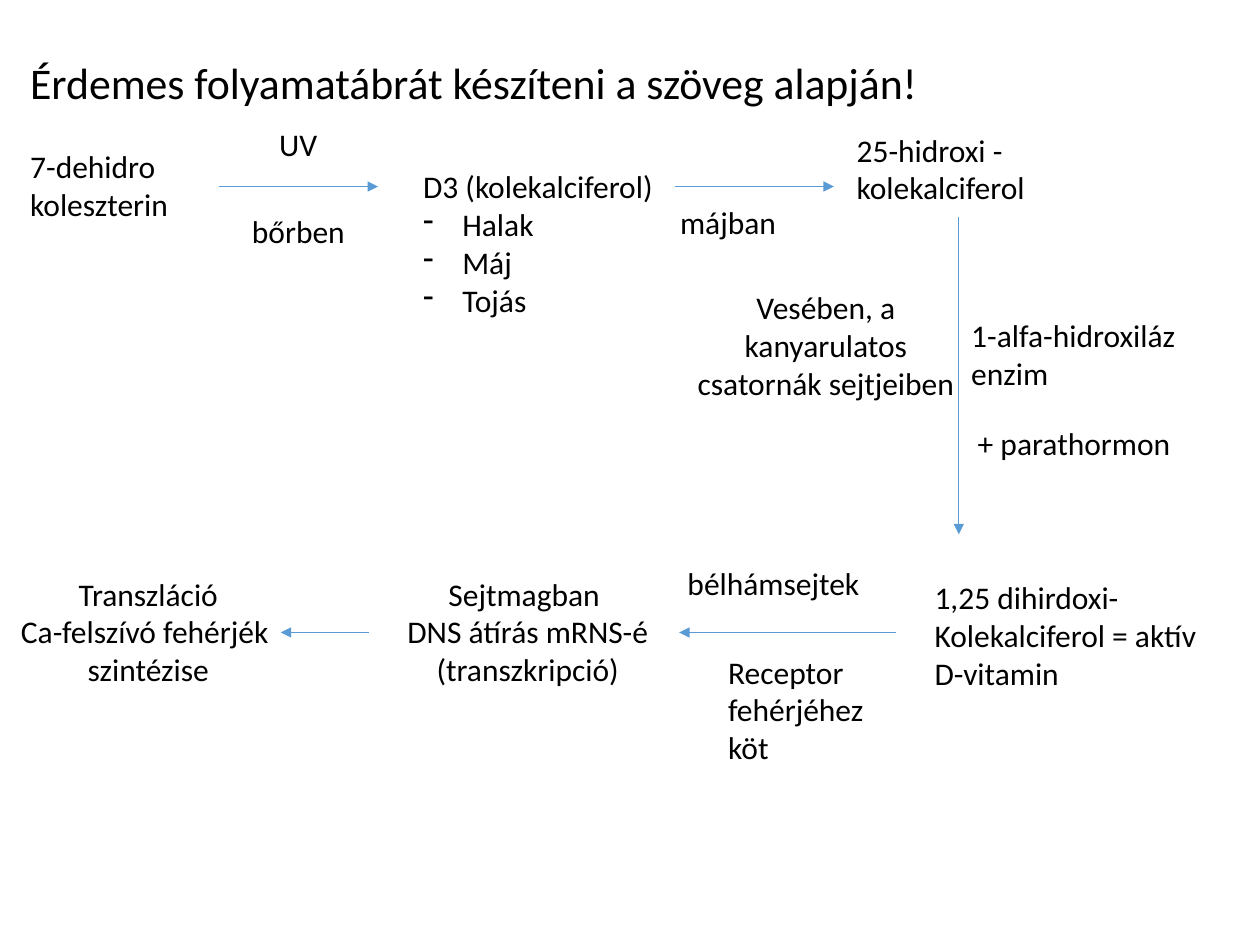
from lxml import etree
from pptx import Presentation
from pptx.dml.color import RGBColor
from pptx.enum.shapes import MSO_CONNECTOR as Connector
from pptx.enum.text import MSO_AUTO_SIZE as AutoSize, PP_ALIGN as Align
from pptx.oxml.ns import qn
from pptx.util import Cm, Pt

BLACK = RGBColor(0x00, 0x00, 0x00)
BLUE = RGBColor(0x5B, 0x9B, 0xD5)


class FlowChart:
    font_name = "Calibri"
    text_size = 18
    line_width = 0.5

    def __init__(self, page):
        self.page = page

    def text(self, left, top, width, lines, size=None, align=Align.LEFT,
             wrap=False, rows=None, bullets_from=None):
        """Add a text box whose height follows from its number of rows."""
        size = size or self.text_size
        height = 0.25 + (rows or len(lines)) * size * 0.043
        box = self.page.shapes.add_textbox(Cm(left), Cm(top), Cm(width), Cm(height))
        frame = box.text_frame
        frame.word_wrap = wrap
        frame.auto_size = AutoSize.SHAPE_TO_FIT_TEXT
        for index, line in enumerate(lines):
            para = frame.paragraphs[0] if index == 0 else frame.add_paragraph()
            para.text = line
            para.alignment = align
            para.font.name = self.font_name
            para.font.size = Pt(size)
            para.font.color.rgb = BLACK
            if bullets_from is not None and index >= bullets_from:
                self.bullet(para)

    def bullet(self, para, indent=Cm(0.79)):
        props = para._p.get_or_add_pPr()
        props.set("marL", str(indent))
        props.set("indent", str(-indent))
        mark = etree.Element(qn("a:buChar"), char="-")
        props.insert_element_before(mark, "a:tabLst", "a:defRPr", "a:extLst")

    def arrow(self, start_x, start_y, end_x, end_y):
        line = self.page.shapes.add_connector(
            Connector.STRAIGHT, Cm(start_x), Cm(start_y), Cm(end_x), Cm(end_y))
        line.line.color.rgb = BLUE
        line.line.width = Pt(self.line_width)
        etree.SubElement(line.line._get_or_add_ln(), qn("a:tailEnd"), type="triangle")
        etree.SubElement(line._element.spPr, qn("a:effectLst"))


def main():
    deck = Presentation()
    deck.slide_width, deck.slide_height = Cm(25.4), Cm(19.05)
    chart = FlowChart(deck.slides.add_slide(deck.slide_layouts[6]))

    # Title
    chart.text(0.36, 0.99, 18.62,
               ["Érdemes folyamatábrát készíteni a szöveg alapján!"], size=25)

    # Upper row: from skin to liver
    chart.text(0.36, 2.84, 3.33, ["7-dehidro", "koleszterin"])
    chart.arrow(4.42, 3.76, 7.62, 3.76)
    chart.text(5.38, 2.39, 1.3, ["UV"])
    chart.text(4.83, 4.14, 2.41, ["bőrben"])
    chart.text(8.28, 3.25, 5.33,
               ["D3 (kolekalciferol)", "Halak", "Máj", "Tojás"], bullets_from=1)
    chart.arrow(13.61, 3.76, 16.81, 3.76)
    chart.text(13.46, 3.96, 2.46, ["májban"])
    chart.text(17.02, 2.51, 3.94, ["25-hidroxi -", "kolekalciferol"])

    # Downward step: kidney
    chart.arrow(19.33, 4.37, 19.33, 10.77)
    chart.text(13.69, 5.69, 5.92, ["Vesében, a kanyarulatos csatornák sejtjeiben"],
               align=Align.CENTER, wrap=True, rows=3)
    chart.text(19.33, 6.25, 4.83, ["1-alfa-hidroxiláz", "enzim"])
    chart.text(19.46, 8.43, 4.45, ["+ parathormon"])

    # Lower row: from active vitamin to protein synthesis
    chart.text(18.59, 11.53, 5.99,
               ["1,25 dihirdoxi-", "Kolekalciferol = aktív", "D-vitamin"])
    chart.arrow(18.06, 12.75, 13.69, 12.75)
    chart.text(13.61, 11.25, 4.01, ["bélhámsejtek"])
    chart.text(14.43, 13.03, 3.91, ["Receptor fehérjéhez köt"], wrap=True, rows=3)
    chart.text(7.92, 11.46, 5.44,
               ["Sejtmagban ", "DNS átírás mRNS-é", "(transzkripció)"],
               align=Align.CENTER)
    chart.arrow(7.44, 12.75, 5.66, 12.75)
    chart.text(0.13, 11.46, 5.72,
               ["Transzláció", "Ca-felszívó fehérjék ", "szintézise"],
               align=Align.CENTER)

    deck.save("out.pptx")


if __name__ == "__main__":
    main()
